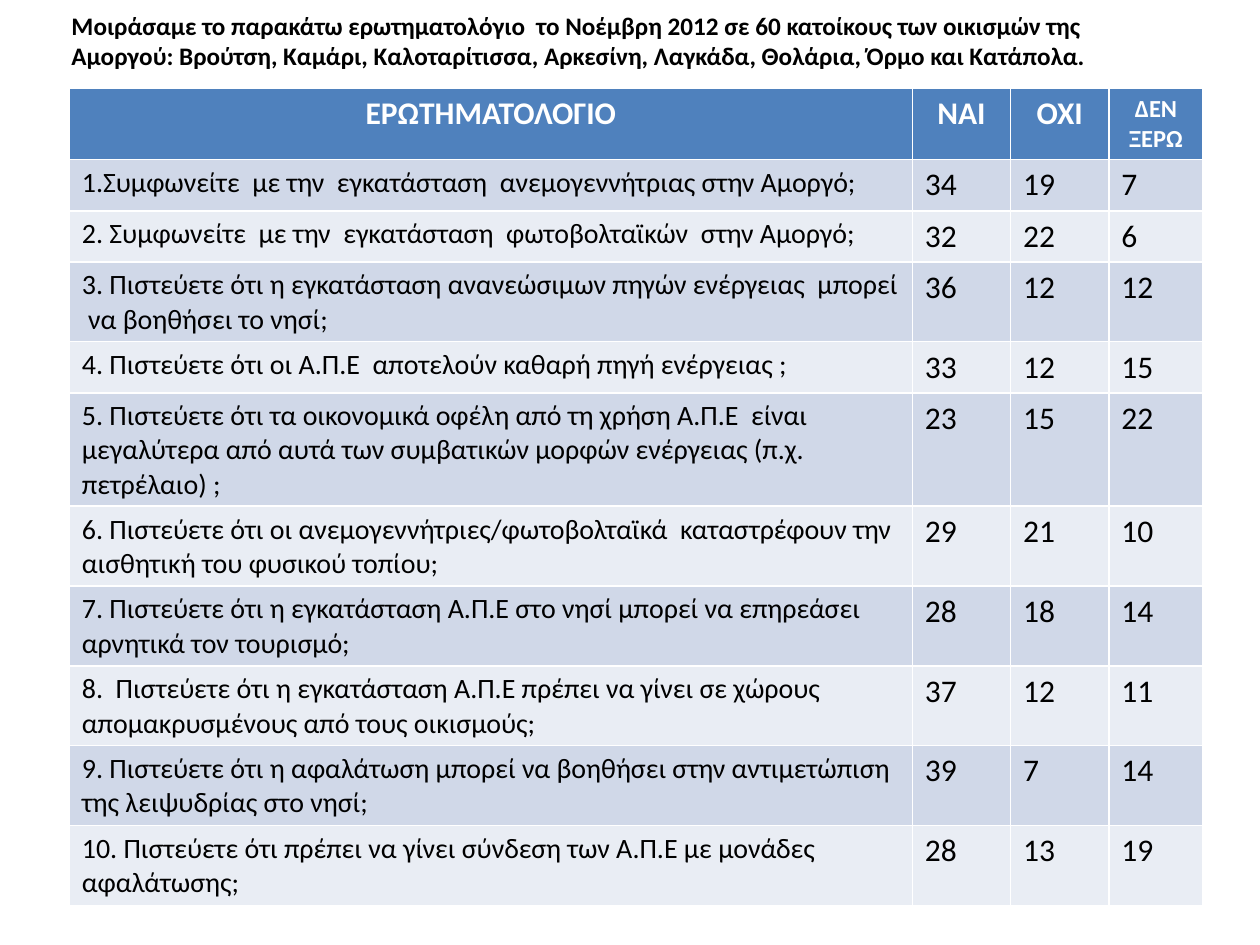
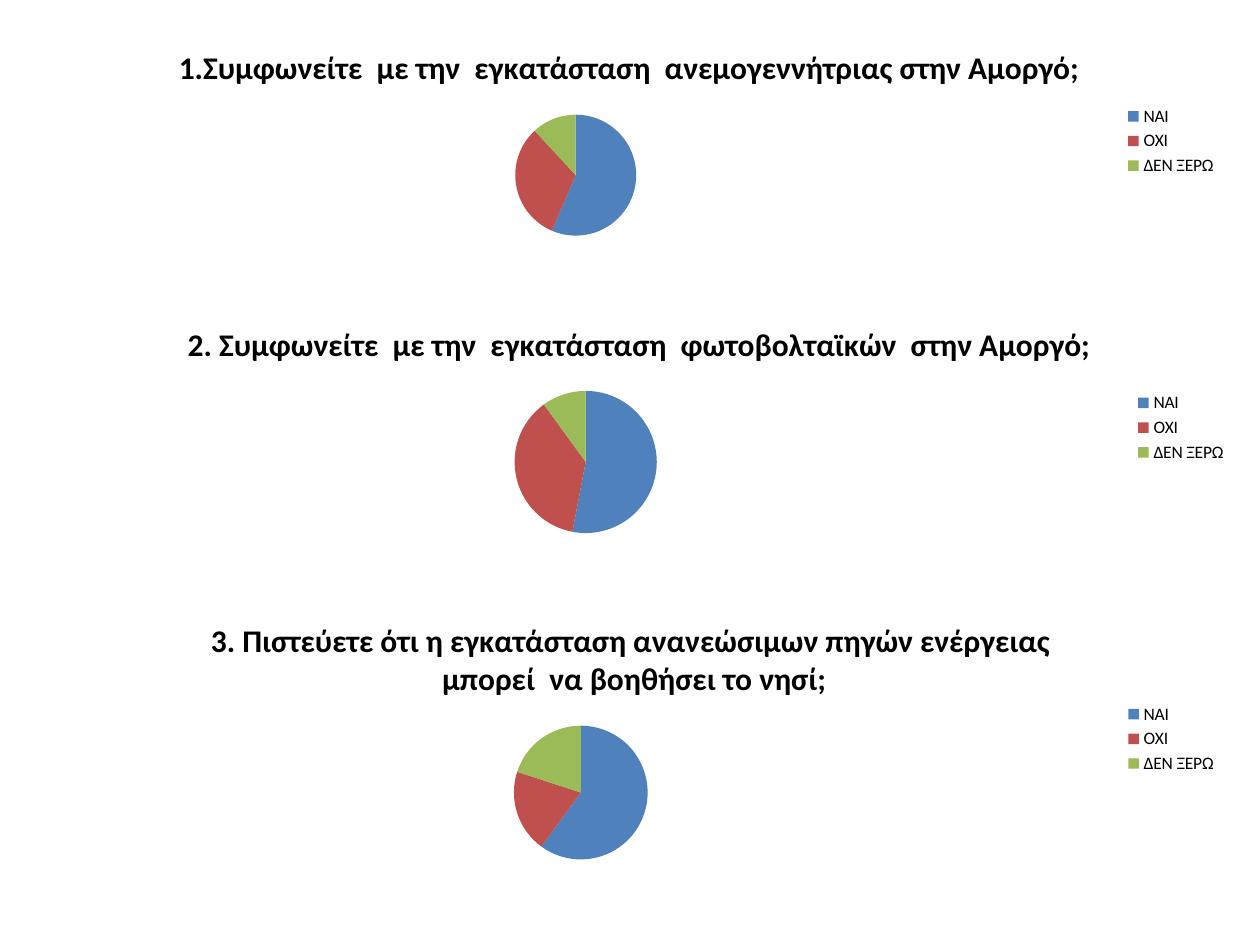
"""Builds two slides on an energy survey: the answers as a table, and three of them as pies."""
from pptx import Presentation
from pptx.chart.data import CategoryChartData
from pptx.dml.color import RGBColor
from pptx.enum.chart import XL_CHART_TYPE as ChartType, XL_LEGEND_POSITION as LegendPosition
from pptx.enum.text import MSO_ANCHOR as Anchor, PP_ALIGN as Align
from pptx.util import Pt

COLOURS = {
    "text": "000000", "paper": "FFFFFF", "header": "4F81BD",
    "odd_row": "D0D8E8", "even_row": "E9EDF4",
    "yes": "4F81BD", "no": "C0504D", "unsure": "9BBB59",
}
RESPONDENTS = 60
INTRO = ("Μοιράσαμε το παρακάτω ερωτηματολόγιο  το Νοέμβρη 2012 σε 60 κατοίκους των οικισμών της "
         "Αμοργού: Βρούτση, Καμάρι, Καλοταρίτισσα, Αρκεσίνη, Λαγκάδα, Θολάρια, Όρμο και Κατάπολα.")
HEADINGS = ["ΕΡΩΤΗΜΑΤΟΛΟΓΙΟ", "ΝΑΙ", "ΟΧΙ", "ΔΕΝ ΞΕΡΩ"]
PIE_LABELS = ["ΝΑΙ", "ΌΧΙ", "ΔΕΝ ΞΕΡΩ"]
ANSWERS = [
    ("1.Συμφωνείτε  με την  εγκατάσταση  ανεμογεννήτριας στην Αμοργό;", 34, 19, 7),
    ("2. Συμφωνείτε  με την  εγκατάσταση  φωτοβολταϊκών  στην Αμοργό;", 32, 22, 6),
    ("3. Πιστεύετε ότι η εγκατάσταση ανανεώσιμων πηγών ενέργειας  "
     "μπορεί  να βοηθήσει το νησί;", 36, 12, 12),
    ("4. Πιστεύετε ότι οι Α.Π.Ε  αποτελούν καθαρή πηγή ενέργειας ;", 33, 12, 15),
    ("5. Πιστεύετε ότι τα οικονομικά οφέλη από τη χρήση Α.Π.Ε  είναι "
     "μεγαλύτερα από αυτά των συμβατικών μορφών ενέργειας (π.χ. πετρέλαιο) ;", 23, 15, 22),
    ("6. Πιστεύετε ότι οι ανεμογεννήτριες/φωτοβολταϊκά  καταστρέφουν την "
     "αισθητική του φυσικού τοπίου;", 29, 21, 10),
    ("7. Πιστεύετε ότι η εγκατάσταση Α.Π.Ε στο νησί μπορεί να επηρεάσει "
     "αρνητικά τον τουρισμό;", 28, 18, 14),
    ("8.  Πιστεύετε ότι η εγκατάσταση Α.Π.Ε πρέπει να γίνει σε χώρους "
     "απομακρυσμένους από τους οικισμούς;", 37, 12, 11),
    ("9. Πιστεύετε ότι η αφαλάτωση μπορεί να βοηθήσει στην αντιμετώπιση "
     "της λειψυδρίας στο νησί;", 39, 7, 14),
    ("10. Πιστεύετε ότι πρέπει να γίνει σύνδεση των Α.Π.Ε με μονάδες αφαλάτωσης;", 28, 13, 19),
]
PIE_PLACES = [(16.6, 16.6, 686, 128), (22.3, 174.2, 686, 140.4), (22.3, 343.4, 680.4, 157.7)]


class SurveyDeck:
    """Holds the style and the current slide."""

    font_name = "Calibri"

    def __init__(self):
        self.deck = Presentation()
        self.deck.slide_width, self.deck.slide_height = Pt(720), Pt(540)
        self.page = None

    def add_page(self):
        self.page = self.deck.slides.add_slide(self.deck.slide_layouts[6])

    def style(self, font, size, colour="text", bold=False):
        font.name, font.size, font.bold = self.font_name, Pt(size), bold
        font.color.rgb = RGBColor.from_string(COLOURS[colour])

    def paint(self, fill, colour):
        fill.solid()
        fill.fore_color.rgb = RGBColor.from_string(COLOURS[colour])

    def add_title(self, text, place, size):
        box = self.page.shapes.add_textbox(*map(Pt, place))
        frame = box.text_frame
        frame.word_wrap, frame.vertical_anchor = True, Anchor.MIDDLE
        frame.text = text
        self.style(frame.paragraphs[0].font, size, bold=True)

    def write_cell(self, cell, text, size, fill, header=False):
        self.paint(cell.fill, fill)
        cell.text = str(text)
        para = cell.text_frame.paragraphs[0]
        para.alignment = Align.CENTER if header else Align.LEFT
        self.style(para.font, size, "paper" if header else "text", header)

    def add_answer_table(self, place, widths, header_height, row_height):
        frame = self.page.shapes.add_table(len(ANSWERS) + 1, len(HEADINGS), *map(Pt, place))
        table = frame.table
        for column, width in zip(table.columns, widths):
            column.width = Pt(width)
        for row in table.rows:
            row.height = Pt(row_height)
        table.rows[0].height = Pt(header_height)
        frame.height = Pt(place[3])
        for column, (heading, size) in enumerate(zip(HEADINGS, (18, 18, 18, 14))):
            self.write_cell(table.cell(0, column), heading, size, "header", header=True)
        for row, answers in enumerate(ANSWERS, 1):
            fill = "odd_row" if row % 2 else "even_row"
            for column, text in enumerate(answers):
                self.write_cell(table.cell(row, column), text, 18 if column else 16, fill)

    def add_pie(self, question, counts, place):
        data = CategoryChartData()
        data.categories = PIE_LABELS
        data.add_series(question, [round(100 * count / RESPONDENTS) for count in counts])
        chart = self.page.shapes.add_chart(ChartType.PIE, *map(Pt, place), data).chart
        self.style(chart.font, 10)
        chart.has_title = True
        title = chart.chart_title
        title.include_in_layout = False
        title.text_frame.text = question
        self.style(title.text_frame.paragraphs[0].font, 18, bold=True)
        chart.has_legend = True
        chart.legend.position = LegendPosition.RIGHT
        chart.legend.include_in_layout = False
        plot = chart.plots[0]
        plot.vary_by_categories = True
        for index, colour in enumerate(("yes", "no", "unsure")):
            self.paint(plot.series[0].points[index].format.fill, colour)


def main():
    survey = SurveyDeck()

    survey.add_page()
    survey.add_title(INTRO, (33.8, 0, 648, 46), 14.4)
    survey.add_answer_table((39.6, 50.4, 648, 466.6), (481.7, 56.2, 56.2, 53.9), 33.8, 29.2)

    survey.add_page()
    for (question, *counts), place in zip(ANSWERS, PIE_PLACES):
        survey.add_pie(question, counts, place)

    survey.deck.save("out.pptx")


if __name__ == "__main__":
    main()
